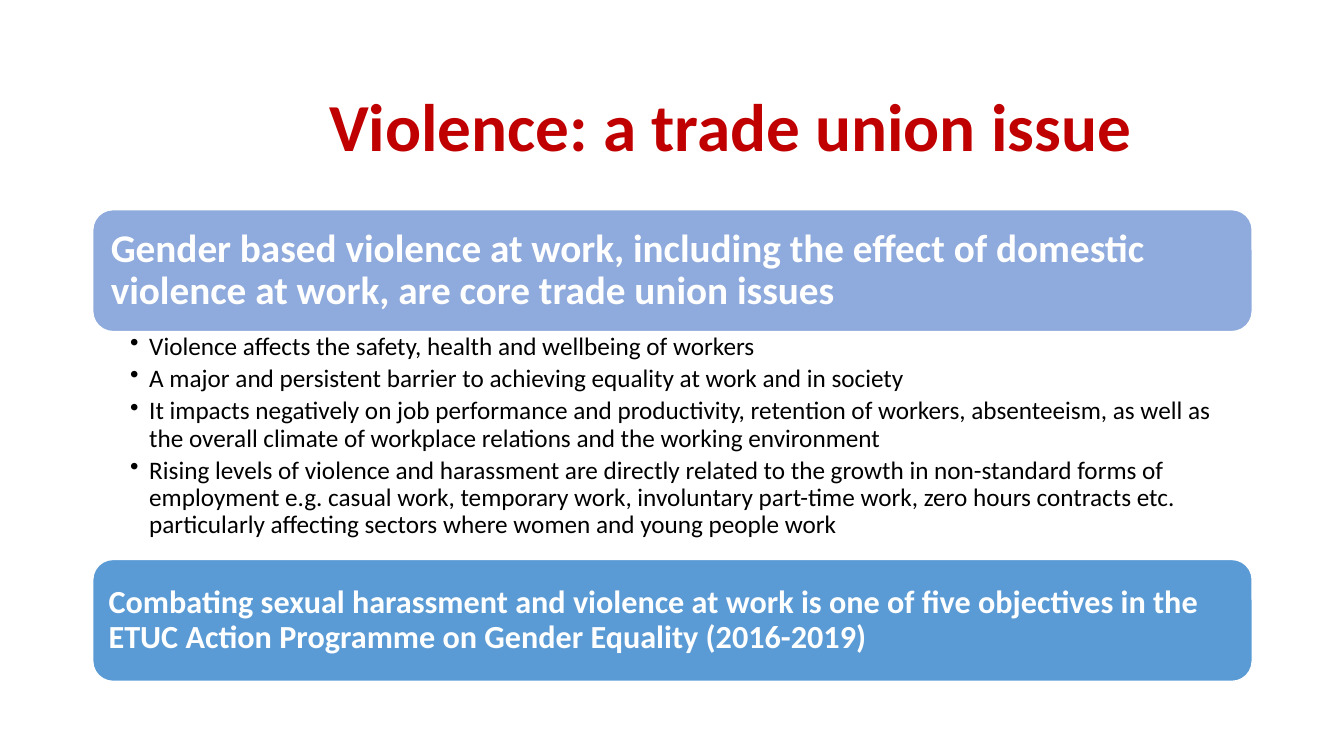
from pptx import Presentation
from pptx.dml.color import RGBColor
from pptx.enum.shapes import MSO_SHAPE as Shape
from pptx.enum.text import MSO_ANCHOR as Anchor, PP_ALIGN as Align
from pptx.oxml.ns import qn
from pptx.util import Inches, Pt
from lxml import etree

FONT = "Calibri"
WHITE, BLACK, RED = "FFFFFF", "000000", "C00000"
LEFT, WIDTH, BANNER_HEIGHT = 0.92, 11.5, 1.21
BULLET_INDENT = 0.19

EFFECTS = [
    "Violence affects the safety, health and wellbeing of workers",
    "A major and persistent barrier to achieving equality at work and in society",
    "It impacts negatively on job performance and productivity, retention of workers, "
    "absenteeism, as well as the overall climate of workplace relations and the working "
    "environment",
    "Rising levels of violence and harassment are directly related to the growth in "
    "non-standard forms of employment e.g. casual work, temporary work, involuntary "
    "part-time work, zero hours contracts etc. particularly affecting sectors where "
    "women and young people work",
]


def color(hex_value):
    return RGBColor.from_string(hex_value)


def set_frame(frame, insets, anchor):
    """Wrap the text and set its insets: left, top, right, bottom."""
    left, top, right, bottom = map(Inches, insets)
    layout = {"word_wrap": True, "vertical_anchor": anchor,
              "margin_left": left, "margin_top": top,
              "margin_right": right, "margin_bottom": bottom}
    for name, value in layout.items():
        setattr(frame, name, value)


def format_paragraph(paragraph, text, size, hex_value, bold=False, align=Align.LEFT):
    paragraph.text = text
    paragraph.alignment = align
    paragraph.line_spacing = 0.9
    for name, value in {"name": FONT, "size": Pt(size), "bold": bold}.items():
        setattr(paragraph.font, name, value)
    paragraph.font.color.rgb = color(hex_value)


def add_bullet(paragraph):
    properties = paragraph._p.get_or_add_pPr()
    properties.set("marL", str(Inches(BULLET_INDENT)))
    properties.set("indent", str(-Inches(BULLET_INDENT)))
    etree.SubElement(properties, qn("a:buChar")).set("char", "•")


def add_text_box(slide, left, top, width, height, insets, anchor):
    box = slide.shapes.add_textbox(*map(Inches, (left, top, width, height)))
    set_frame(box.text_frame, insets, anchor)
    return box.text_frame


def add_title(slide, text):
    # The wider left inset sets the title slightly right of centre
    frame = add_text_box(slide, 0.85, 0.91, 12.49, 0.76,
                         (0.4, 0.05, 0.1, 0.05), Anchor.MIDDLE)
    format_paragraph(frame.paragraphs[0], text, 48, RED, True, Align.CENTER)


def add_banner(slide, top, text, fill, size, inset):
    banner = slide.shapes.add_shape(
        Shape.ROUNDED_RECTANGLE, *map(Inches, (LEFT, top, WIDTH, BANNER_HEIGHT)))
    banner.shadow.inherit = False
    banner.fill.solid()
    banner.fill.fore_color.rgb = color(fill)
    banner.line.color.rgb = color(WHITE)
    banner.line.width = Pt(1)
    set_frame(banner.text_frame, [inset] * 4, Anchor.MIDDLE)
    format_paragraph(banner.text_frame.paragraphs[0], text, size, WHITE, True)


def add_bullet_list(slide, top, height, items):
    frame = add_text_box(slide, LEFT, top, WIDTH, height,
                         (0.37, 0.03, 0.18, 0.03), Anchor.TOP)
    for index, item in enumerate(items):
        paragraph = frame.add_paragraph() if index else frame.paragraphs[0]
        add_bullet(paragraph)
        format_paragraph(paragraph, item, 18, BLACK)
        paragraph.space_after = Pt(3.6)


def main():
    deck = Presentation()
    deck.slide_width, deck.slide_height = Inches(13.33), Inches(7.5)
    slide = deck.slides.add_slide(deck.slide_layouts[6])

    # Core issue and its effects
    add_banner(slide, 2.08,
               "Gender based violence at work, including the effect of domestic "
               "violence at work, are core trade union issues", "8FAADC", 28, 0.12)
    add_bullet_list(slide, 3.28, 2.19, EFFECTS)

    # Action programme
    add_banner(slide, 5.55,
               "Combating sexual harassment and violence at work is one of five "
               "objectives in the ETUC Action Programme on Gender Equality (2016-2019)",
               "5B9BD5", 23, 0.1)

    add_title(slide, "Violence: a trade union issue")
    deck.save("out.pptx")


if __name__ == "__main__":
    main()
